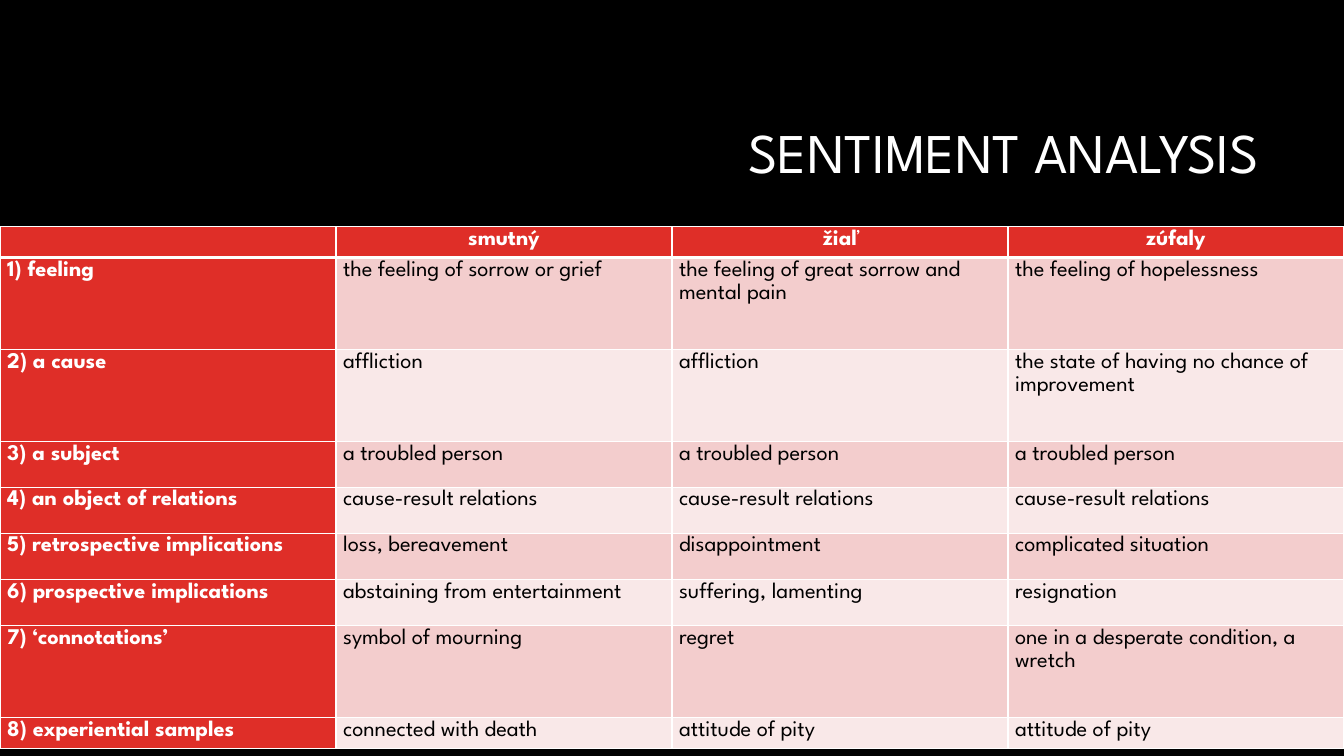
from pptx import Presentation
from pptx import util as u
from pptx.dml import color
from pptx.enum import text
from pptx.oxml import xmlchemy as x

WHITE, BLACK, RED = "FFFFFF", "000000", "DF2E28"
BANDS = ("F3CDCD", "F9E8E8")
ROW_HEIGHTS = (0.61, 2.32, 2.32, 1.15, 1.16, 1.16, 1.16, 2.32, 0.61)
ROWS = (
    ("", "smutný", "žiaľ", "zúfaly"),
    ("1) feeling", "the feeling of sorrow or grief",
     "the feeling of great sorrow and mental pain", "the feeling of hopelessness"),
    ("2) a cause", "affliction", "affliction",
     "the state of having no chance of improvement"),
    ("3) a subject", "a troubled person", "a troubled person", "a troubled person"),
    ("4) an object of relations", "cause-result relations",
     "cause-result relations", "cause-result relations"),
    ("5) retrospective implications", "loss, bereavement", "disappointment",
     "complicated situation"),
    ("6) prospective implications", "abstaining from entertainment",
     "suffering, lamenting", "resignation"),
    ("7) ‘connotations’", "symbol of mourning", "regret",
     "one in a desperate condition, a wretch"),
    ("8) experiential samples", "connected with death", "attitude of pity",
     "attitude of pity"),
)


def rgb(value):
    return color.RGBColor.from_string(value)


class SlideBuilder:
    """Draw styled elements on one slide."""

    font_name = "League Spartan"

    def __init__(self, slide):
        self.slide = slide

    def background(self, fill):
        self.slide.background.fill.solid()
        self.slide.background.fill.fore_color.rgb = rgb(fill)

    def style_text(self, paragraph, content, size, ink, align, spacing, bold=False):
        paragraph.text = content
        paragraph.alignment = align
        paragraph.line_spacing = spacing
        for run in paragraph.runs:
            run.font.name = self.font_name
            run.font.size = u.Pt(size)
            run.font.bold = bold
            run.font.color.rgb = rgb(ink)
        if not content:
            end = x.OxmlElement("a:endParaRPr")
            end.set("sz", str(size * 100))
            paragraph._p.append(end)

    def title(self, content, left, top, width, height):
        shape = self.slide.shapes.add_textbox(
            u.Cm(left), u.Cm(top), u.Cm(width), u.Cm(height))
        frame = shape.text_frame
        frame.word_wrap = True
        frame.vertical_anchor = text.MSO_ANCHOR.MIDDLE
        self.style_text(frame.paragraphs[0], content, 40, WHITE,
                        text.PP_ALIGN.RIGHT, 0.9)

    def border(self, cell, side, width):
        line = x.OxmlElement(f"a:ln{side}")
        line.set("w", str(u.Pt(width)))
        fill = x.OxmlElement("a:solidFill")
        ink = x.OxmlElement("a:srgbClr")
        ink.set("val", WHITE)
        fill.append(ink)
        line.append(fill)
        cell._tc.get_or_add_tcPr().append(line)

    def cell(self, cell, content, row, column):
        heading = row == 0 or column == 0
        cell.margin_left = cell.margin_right = u.Cm(0.18)
        cell.margin_top = cell.margin_bottom = 0
        thick_side = {0: "B", 1: "T"}.get(row)
        for side in "LRTB":
            self.border(cell, side, 3 if side == thick_side else 1)
        cell.fill.solid()
        cell.fill.fore_color.rgb = rgb(RED if heading else BANDS[(row - 1) % 2])
        align = text.PP_ALIGN.LEFT if row else text.PP_ALIGN.CENTER
        self.style_text(cell.text_frame.paragraphs[0], content, 16,
                        WHITE if heading else BLACK, align, 1.15, heading)

    def table(self, rows, heights, left, top, width):
        table = self.slide.shapes.add_table(
            len(rows), len(rows[0]), u.Cm(left), u.Cm(top),
            u.Cm(width), u.Cm(sum(heights))).table
        for row, (contents, height) in enumerate(zip(rows, heights)):
            table.rows[row].height = u.Cm(height)
            for column, content in enumerate(contents):
                self.cell(table.cell(row, column), content, row, column)


def main():
    presentation = Presentation()
    presentation.slide_width = u.Cm(33.87)
    presentation.slide_height = u.Cm(19.05)
    builder = SlideBuilder(presentation.slides.add_slide(presentation.slide_layouts[6]))
    builder.background(BLACK)
    builder.title("SENTIMENT ANALYSIS", 8.05, 2.13, 23.93, 3.58)
    builder.table(ROWS, ROW_HEIGHTS, 0, 5.71, 33.87)
    presentation.save("out.pptx")


if __name__ == "__main__":
    main()
